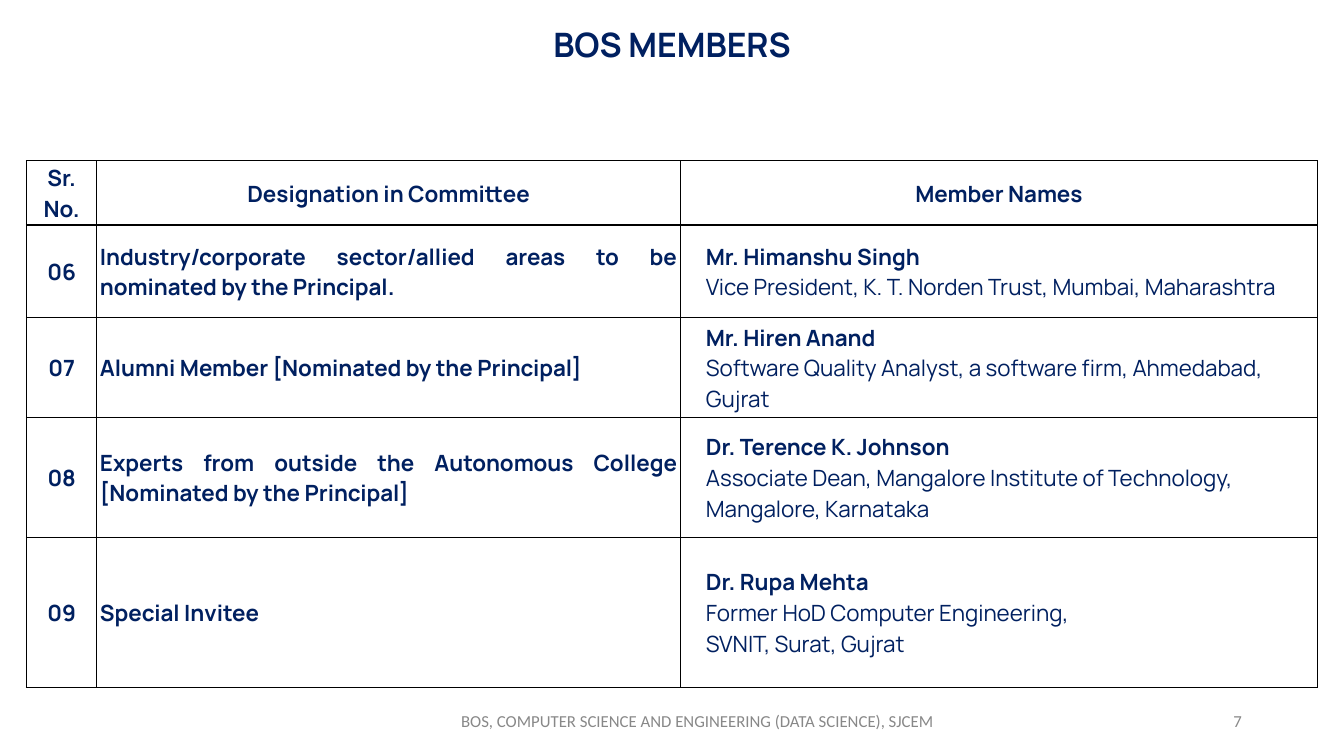
from lxml import etree
from pptx import Presentation
from pptx import util as u
from pptx.dml.color import RGBColor
from pptx.enum import text
from pptx.oxml.ns import qn

NAVY = RGBColor(0x00, 0x20, 0x60)
GREY = RGBColor(0x88, 0x88, 0x88)
WHITE = RGBColor(0xFF, 0xFF, 0xFF)
BORDER = "000000"
Cm = u.Cm
ALIGN = text.PP_ALIGN

COLUMN_WIDTHS = (1.77, 14.71, 16.05)
ROW_HEIGHTS = (1.62, 2.34, 2.51, 3.02, 3.78)
HEADINGS = ("Sr. No.", "Designation in Committee", "Member Names")
MEMBERS = (
    ("06", "Industry/corporate sector/allied areas to be nominated by the Principal.",
     ("Mr. Himanshu Singh",
      "Vice President, K. T. Norden Trust, Mumbai, Maharashtra")),
    ("07", "Alumni Member [Nominated by the Principal]",
     ("Mr. Hiren Anand",
      "Software Quality Analyst, a software firm, Ahmedabad, Gujrat")),
    ("08", "Experts from outside the Autonomous College [Nominated by the Principal]",
     ("Dr. Terence K. Johnson",
      "Associate Dean, Mangalore Institute of Technology, Mangalore, Karnataka")),
    ("09", "Special Invitee",
     ("Dr. Rupa Mehta", "Former HoD Computer Engineering,", "SVNIT, Surat, Gujrat")),
)


def style_paragraph(para, size, align, bold=False, name="Manrope", color=NAVY):
    para.alignment = align
    para.font.size = u.Pt(size)
    para.font.name = name
    para.font.bold = bold
    para.font.color.rgb = color


def add_title(page, words):
    title = page.shapes.title
    title.left, title.top, title.width, title.height = Cm(0), Cm(0.58), Cm(33.87), Cm(1.04)
    frame = title.text_frame
    frame.text = words
    frame.auto_size = text.MSO_AUTO_SIZE.NONE
    frame.vertical_anchor = text.MSO_ANCHOR.TOP
    frame.margin_left = frame.margin_right = frame.margin_bottom = 0
    frame.margin_top = Cm(0.03)
    style_paragraph(frame.paragraphs[0], 24, ALIGN.CENTER, bold=True)


def add_footer(page, words, left, width, align):
    box = page.shapes.add_textbox(Cm(left), Cm(17.65), Cm(width), Cm(1.01))
    frame = box.text_frame
    frame.word_wrap = True
    frame.vertical_anchor = text.MSO_ANCHOR.MIDDLE
    frame.text = words
    style_paragraph(frame.paragraphs[0], 12, align, name="Calibri", color=GREY)


def add_borders(properties):
    # Borders come before the fill in the cell properties
    for position, side in enumerate(("a:lnL", "a:lnR", "a:lnT", "a:lnB")):
        line = etree.Element(qn(side), w=str(u.Pt(0.96)))
        fill = etree.SubElement(line, qn("a:solidFill"))
        etree.SubElement(fill, qn("a:srgbClr"), val=BORDER)
        properties.insert(position, line)


def fill_cell(cell, lines, align, indent=0):
    cell.fill.solid()
    cell.fill.fore_color.rgb = WHITE
    cell.vertical_anchor = text.MSO_ANCHOR.MIDDLE
    cell.margin_left = cell.margin_right = Cm(0.08)
    cell.margin_top, cell.margin_bottom = Cm(0.05), Cm(0.02)
    cell.text = "\n".join(lines)
    for number, para in enumerate(cell.text_frame.paragraphs):
        if indent:
            para._p.get_or_add_pPr().set("marL", str(Cm(indent)))
        style_paragraph(para, 16, align, bold=number == 0)
    add_borders(cell._tc.get_or_add_tcPr())


def add_members_table(page):
    frame = page.shapes.add_table(
        len(ROW_HEIGHTS), len(COLUMN_WIDTHS), Cm(0.67), Cm(4.05),
        Cm(sum(COLUMN_WIDTHS)), Cm(sum(ROW_HEIGHTS)))
    table = frame.table
    table.horz_banding = False
    for column, width in zip(table.columns, COLUMN_WIDTHS):
        column.width = Cm(width)
    for row, height in zip(table.rows, ROW_HEIGHTS):
        row.height = Cm(height)

    # Heading row
    for column, heading in enumerate(HEADINGS):
        fill_cell(table.cell(0, column), [heading], ALIGN.CENTER)

    # One row per member
    for row, (serial, designation, details) in enumerate(MEMBERS, start=1):
        fill_cell(table.cell(row, 0), [serial], ALIGN.CENTER)
        fill_cell(table.cell(row, 1), [designation], ALIGN.JUSTIFY)
        fill_cell(table.cell(row, 2), details, ALIGN.LEFT, indent=0.56)


def main():
    deck = Presentation()
    deck.slide_width, deck.slide_height = Cm(33.87), Cm(19.05)
    page = deck.slides.add_slide(deck.slide_layouts.get_by_name("Title Only"))
    add_title(page, "BOS MEMBERS")
    add_members_table(page)
    add_footer(page, "BOS, COMPUTER SCIENCE AND ENGINEERING (DATA SCIENCE), SJCEM",
               11.23, 12.7, ALIGN.CENTER)
    add_footer(page, "7", 23.93, 7.62, ALIGN.RIGHT)
    deck.save("out.pptx")


if __name__ == "__main__":
    main()
